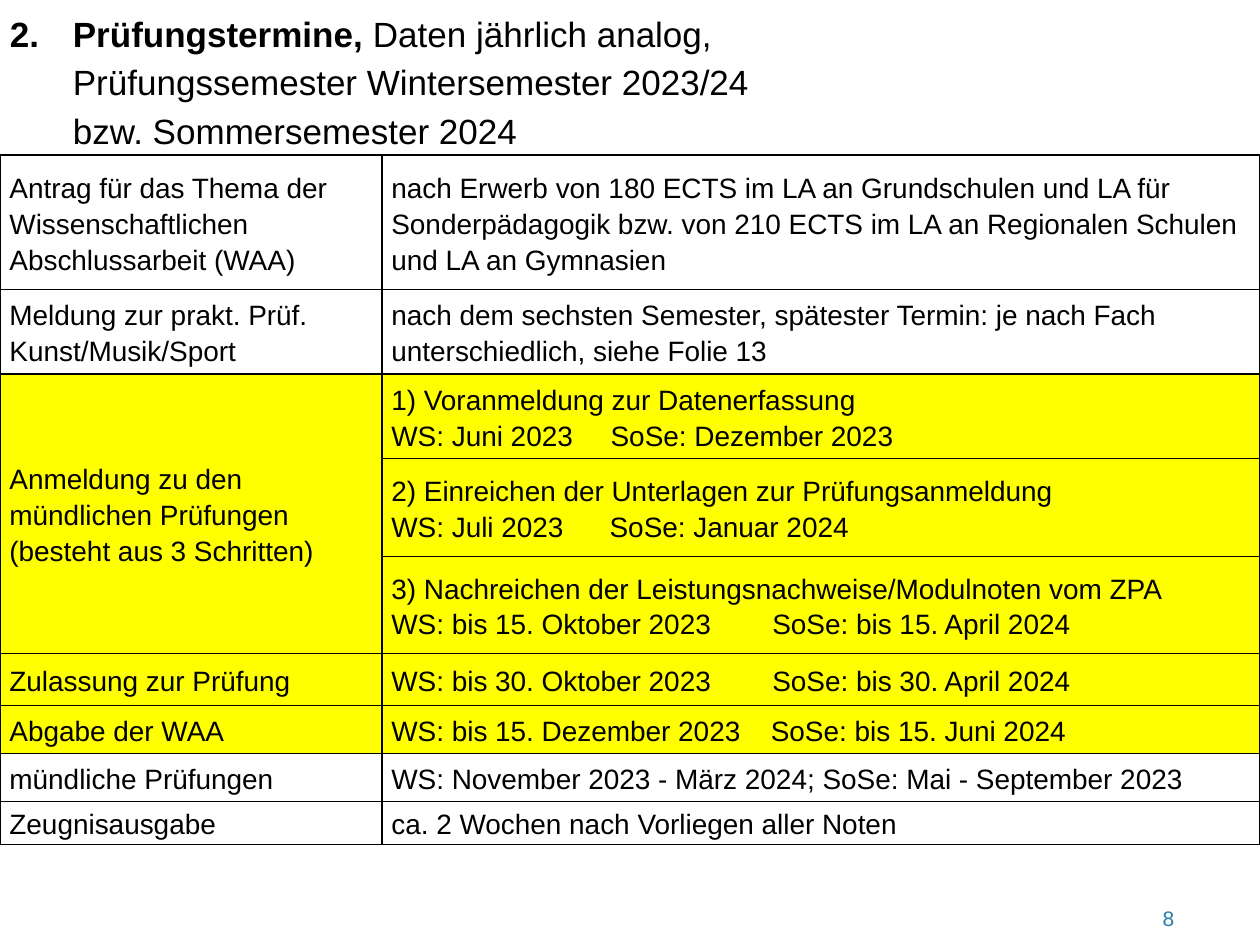
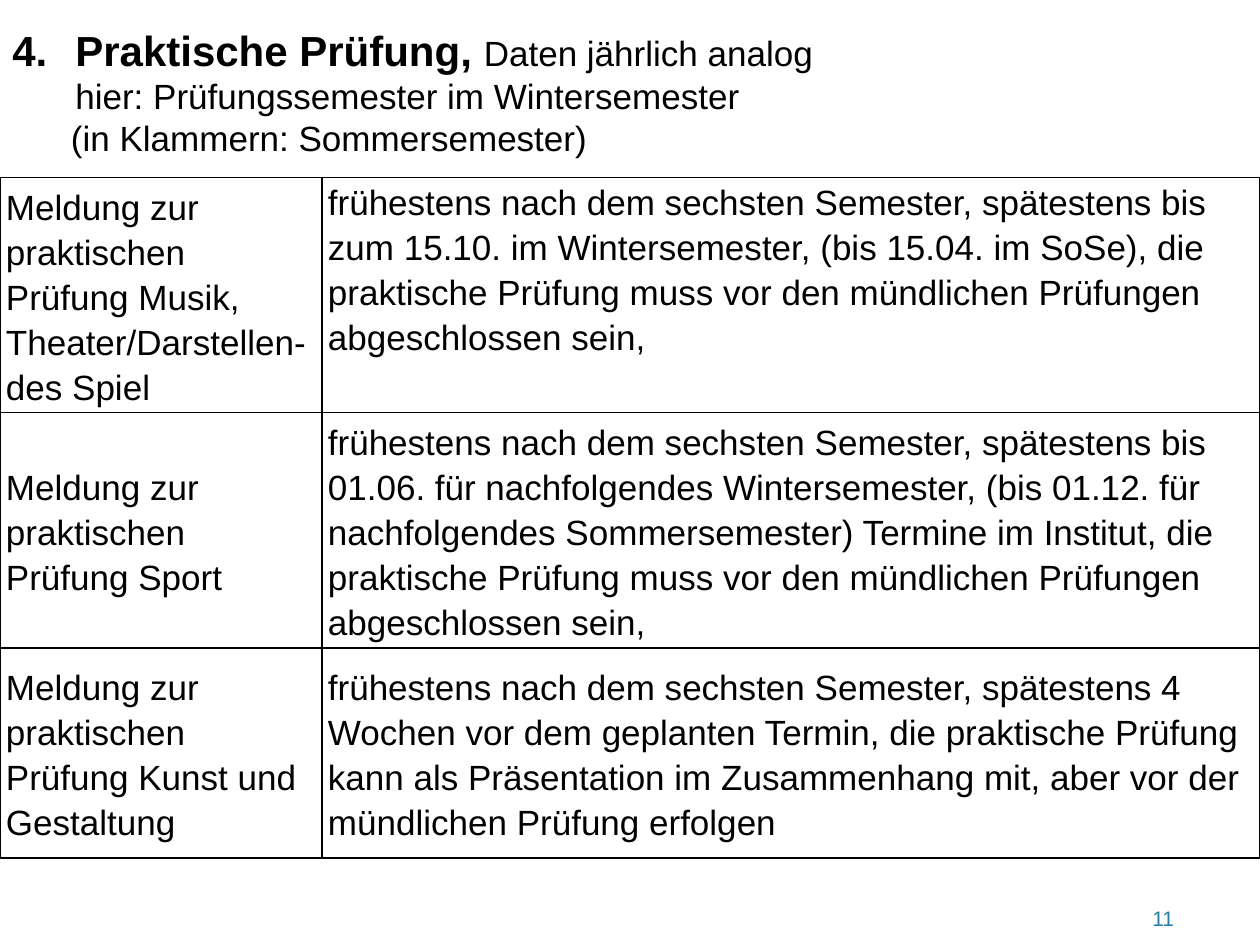
from pptx import Presentation
from pptx.dml.color import RGBColor
from pptx.enum.text import MSO_ANCHOR, PP_ALIGN
from pptx.oxml.ns import qn
from pptx.util import Cm, Pt
from lxml import etree

TOP, MIDDLE = MSO_ANCHOR.TOP, MSO_ANCHOR.MIDDLE
RIGHT = PP_ALIGN.RIGHT

FONT = "Arial"
COLORS = {"text": "000000", "border": "000000", "mark": "FFFF00", "number": "287DA8"}
HANG = 1.27  # indent of the title text behind its number, cm

# Each title paragraph: (left indent in cm, list number or None, [(text, size, bold)])
# Each table row: (height in cm, highlighted, left text or None to join the cell above,
#                  right text, anchor of the right cell, tab stop in cm or None)
SLIDES = [
    {
        "number": "8",
        "title_box": (-0.05, 0, 16.36, 3.12),
        "title_spacing": 1.15,
        "title": [
            (HANG, 2, [
                ("Prüfungstermine, ", 20, True),
                ("Daten jährlich analog, Prüfungssemester Wintersemester 2023/24\n"
                 "bzw. Sommersemester 2024", 20, False),
            ]),
        ],
        "table_top": 3.12,
        "columns": (7.7, 17.7),
        "size": 16,
        "cell_spacing": 1.15,
        "inset": 0.19,
        "rows": [
            (2.72, False, "Antrag für das Thema der Wissenschaftlichen Abschlussarbeit (WAA)",
             "nach Erwerb von 180 ECTS im LA an Grundschulen und LA für Sonderpädagogik "
             "bzw. von 210 ECTS im LA an Regionalen Schulen und LA an Gymnasien", MIDDLE, None),
            (1.7, False, "Meldung zur prakt. Prüf. Kunst/Musik/Sport",
             "nach dem sechsten Semester, spätester Termin: je nach Fach "
             "unterschiedlich, siehe Folie 13", MIDDLE, None),
            (1.7, True, "Anmeldung zu den mündlichen Prüfungen (besteht aus 3 Schritten)",
             "1) Voranmeldung zur Datenerfassung\n"
             "WS: Juni 2023\tSoSe: Dezember 2023", MIDDLE, 4.42),
            (1.98, True, None,
             "2) Einreichen der Unterlagen zur Prüfungsanmeldung\n"
             "WS: Juli 2023\tSoSe: Januar 2024", MIDDLE, 4.4),
            (1.95, True, None,
             "3) Nachreichen der Leistungsnachweise/Modulnoten vom ZPA\n"
             "WS: bis 15. Oktober 2023\tSoSe: bis 15. April 2024", MIDDLE, 7.68),
            (1.05, True, "Zulassung zur Prüfung",
             "WS: bis 30. Oktober 2023\tSoSe: bis 30. April 2024", MIDDLE, 7.68),
            (0.97, True, "Abgabe der WAA",
             "WS: bis 15. Dezember 2023\tSoSe: bis 15. Juni 2024", MIDDLE, 7.65),
            (0.97, False, "mündliche Prüfungen",
             "WS: November 2023 - März 2024; SoSe: Mai - September 2023", MIDDLE, None),
            (0.86, False, "Zeugnisausgabe",
             "ca. 2 Wochen nach Vorliegen aller Noten", MIDDLE, None),
        ],
    },
    {
        "number": "11",
        "title_box": (0, 0.53, 16.89, 3.68),
        "title_spacing": Pt(24),
        "title": [
            (HANG, 4, [
                ("Praktische Prüfung, ", 24, True),
                ("Daten jährlich analog hier: Prüfungssemester im Wintersemester", 20, False),
            ]),
            (1.18, None, [("(in Klammern: Sommersemester)", 20, False)]),
        ],
        "table_top": 3.58,
        "columns": (6.49, 18.91),
        "size": 20,
        "cell_spacing": Pt(25.7),
        "inset": 0.12,
        "rows": [
            (4.74, False, "Meldung zur praktischen Prüfung Musik, Theater/Darstellen-des Spiel",
             "frühestens nach dem sechsten Semester, spätestens bis zum 15.10. im "
             "Wintersemester, (bis 15.04. im SoSe), die praktische Prüfung muss vor den "
             "mündlichen Prüfungen abgeschlossen sein,", TOP, None),
            (4.74, False, "Meldung zur praktischen Prüfung Sport",
             "frühestens nach dem sechsten Semester, spätestens bis 01.06. für "
             "nachfolgendes Wintersemester, (bis 01.12. für nachfolgendes Sommersemester) "
             "Termine im Institut, die praktische Prüfung muss vor den mündlichen "
             "Prüfungen abgeschlossen sein,", MIDDLE, None),
            (4.24, False, "Meldung zur praktischen Prüfung Kunst und Gestaltung",
             "frühestens nach dem sechsten Semester, spätestens 4 Wochen vor dem geplanten "
             "Termin, die praktische Prüfung kann als Präsentation im Zusammenhang mit, "
             "aber vor der mündlichen Prüfung erfolgen", MIDDLE, None),
        ],
    },
]


def rgb(name):
    return RGBColor.from_string(COLORS[name])


def format_runs(runs, size, color="text", bold=False):
    for r in runs:
        r.font.name = FONT
        r.font.size = Pt(size)
        r.font.bold = bold
        r.font.color.rgb = rgb(color)


def add_text_box(slide, box):
    tf = slide.shapes.add_textbox(*map(Cm, box)).text_frame
    tf.word_wrap = True
    return tf


def add_title(slide, box, spacing, paragraphs):
    tf = add_text_box(slide, box)
    for i, (indent, start, runs) in enumerate(paragraphs):
        p = tf.paragraphs[0] if i == 0 else tf.add_paragraph()
        p.line_spacing = spacing
        pPr = p._p.get_or_add_pPr()
        pPr.set("marL", str(Cm(indent)))
        if start:
            pPr.set("indent", str(-Cm(indent)))
            etree.SubElement(pPr, qn("a:buFont"), typeface="+mj-lt")
            etree.SubElement(pPr, qn("a:buAutoNum"), type="arabicPeriod", startAt=str(start))
        for text, size, bold in runs:
            first_new = len(p.runs)
            for j, line in enumerate(text.split("\n")):
                if j:
                    p.add_line_break()
                p.add_run().text = line
            format_runs(p.runs[first_new:], size, bold=bold)


def add_number(slide, number):
    tf = add_text_box(slide, (21.56, 17.78, 2.36, 0.84))
    tf.margin_top, tf.margin_bottom = Cm(0.48), 0
    p = tf.paragraphs[0]
    p.text = number
    p.alignment = RIGHT
    format_runs(p.runs, 12, "number")


def add_borders(cell):
    tcPr = cell._tc.get_or_add_tcPr()
    for i, side in enumerate(("lnL", "lnR", "lnT", "lnB")):
        ln = etree.Element(qn(f"a:{side}"), w=str(Pt(1)))
        fill = etree.SubElement(ln, qn("a:solidFill"))
        etree.SubElement(fill, qn("a:srgbClr"), val=COLORS["border"])
        tcPr.insert(i, ln)


def fill_cell(cell, text, style, anchor, tab=None):
    cell.margin_left = cell.margin_right = Cm(style["inset"])
    cell.margin_top = cell.margin_bottom = 0
    cell.vertical_anchor = anchor
    p = cell.text_frame.paragraphs[0]
    p.text = text
    p.line_spacing = style["cell_spacing"]
    if tab:
        tabs = etree.SubElement(p._p.get_or_add_pPr(), qn("a:tabLst"))
        etree.SubElement(tabs, qn("a:tab"), pos=str(Cm(tab)), algn="l")
    format_runs(p.runs, style["size"])


def add_schedule(slide, data):
    columns, rows = data["columns"], data["rows"]
    height = sum(row[0] for row in rows)
    frame = slide.shapes.add_table(len(rows), len(columns), 0, Cm(data["table_top"]),
                                   Cm(sum(columns)), Cm(height))
    table = frame.table
    table.first_row = table.horz_banding = False
    for column, width in zip(table.columns, columns):
        column.width = Cm(width)
    joined_from = 0
    for i, (row_height, marked, left, right, anchor, tab) in enumerate(rows):
        table.rows[i].height = Cm(row_height)
        for cell in table.rows[i].cells:
            if marked:
                cell.fill.solid()
                cell.fill.fore_color.rgb = rgb("mark")
            else:
                cell.fill.background()
            add_borders(cell)
        fill_cell(table.cell(i, 1), right, data, anchor, tab)
        if left:
            joined_from = i
            fill_cell(table.cell(i, 0), left, data, MIDDLE)
        elif i + 1 == len(rows) or rows[i + 1][2]:
            table.cell(joined_from, 0).merge(table.cell(i, 0))


def main():
    prs = Presentation()
    prs.slide_width, prs.slide_height = Cm(25.4), Cm(19.05)
    for data in SLIDES:
        slide = prs.slides.add_slide(prs.slide_layouts[6])
        add_schedule(slide, data)
        add_title(slide, data["title_box"], data["title_spacing"], data["title"])
        add_number(slide, data["number"])
    prs.save("out.pptx")


if __name__ == "__main__":
    main()
